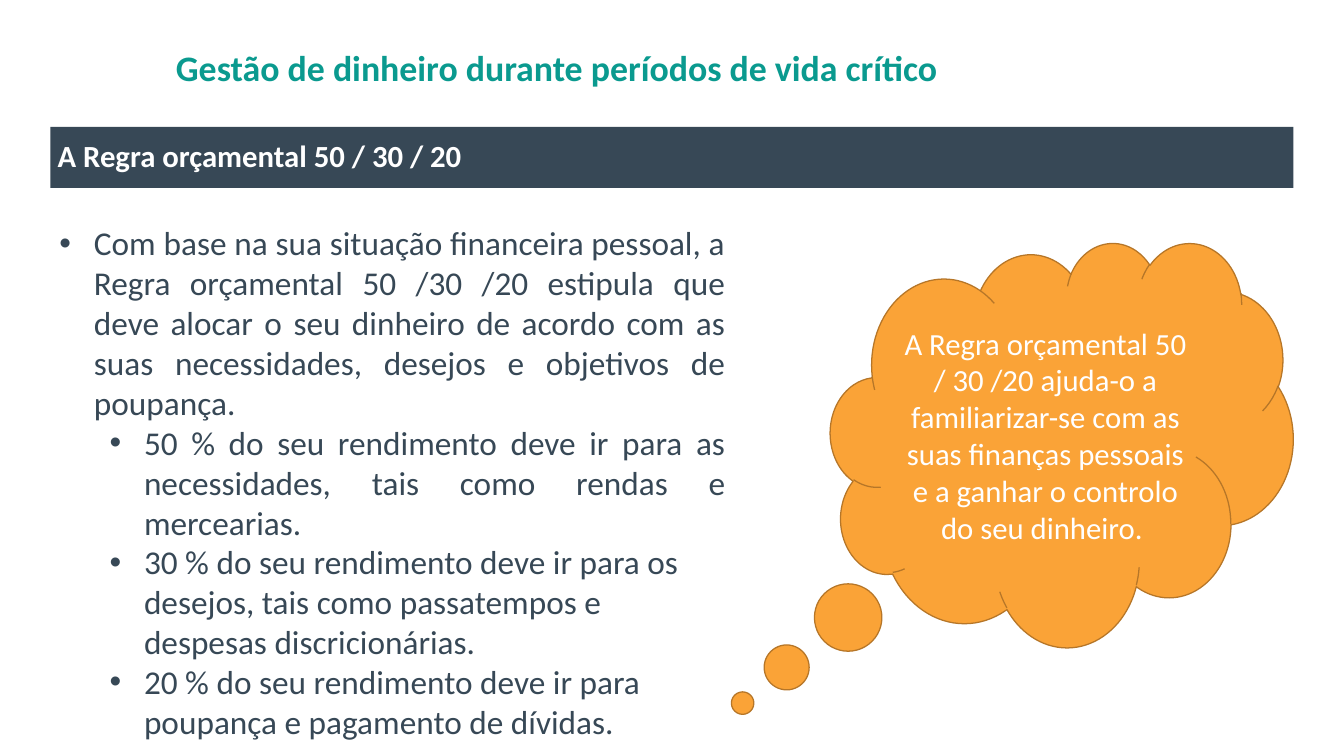
from lxml import etree
from pptx import Presentation
from pptx.dml.color import RGBColor
from pptx.enum import shapes, text
from pptx.oxml import ns
from pptx.util import Cm, Pt

SIZE = (1050, 591)  # points
TEAL, SLATE, WHITE = "0A9A8F", "374856", "FFFFFF"
ORANGE, BROWN = "FAA337", "B67628"
LEFT, CENTER, JUST = (text.PP_ALIGN.LEFT, text.PP_ALIGN.CENTER,
                      text.PP_ALIGN.JUSTIFY)

TITLE = "Gestão de dinheiro durante períodos de vida crítico"
HEAD = "A Regra orçamental 50 / 30 / 20 "
# level, alignment, wording
RULES = [
    (0, JUST, "Com base na sua situação financeira pessoal, a Regra orçamental "
              "50 /30 /20 estipula que deve alocar o seu dinheiro de acordo com "
              "as suas necessidades, desejos e objetivos de poupança. "),
    (1, JUST, "50 % do seu rendimento deve ir para as necessidades, tais como "
              "rendas e mercearias. "),
    (1, LEFT, "30 % do seu rendimento deve ir para os desejos, tais como "
              "passatempos e despesas discricionárias."),
    (1, LEFT, "20 % do seu rendimento deve ir para poupança e pagamento de "
              "dívidas."),
]
THOUGHT = ("A Regra orçamental 50 / 30 /20 ajuda-o a familiarizar-se com as "
           "suas finanças pessoais e a ganhar o controlo do seu dinheiro. ")

# left, top, width, height in cm
TITLE_BOX = (4.65, 0.93, 25.35, 2.01)
HEAD_BOX = (1.39, 3.5, 34.26, 1.68)
RULES_BOX = (1.39, 6.01, 18.87, 14.71)
CLOUD_BOX = (22.89, 6.68, 12.75, 11.15)
TAIL = (-0.69, 0.64)
HANG, STEP = 0.95, 1.38


def rgb(code):
    return RGBColor.from_string(code)


def frame(shape, side, anchor):
    """Set wrapping, margins and anchor, and return the text frame."""
    tf = shape.text_frame
    form = {"word_wrap": True, "vertical_anchor": anchor,
            "margin_left": Cm(side), "margin_right": Cm(side),
            "margin_top": Cm(0.13), "margin_bottom": Cm(0.13)}
    for key, val in form.items():
        setattr(tf, key, val)
    return tf


def write(par, words, size, color, align=LEFT, bold=False, spacing=1.0):
    par.alignment = align
    par.line_spacing = spacing
    run = par.add_run()
    run.text = words
    form = {"name": "Calibri", "size": Pt(size), "bold": bold}
    for key, val in form.items():
        setattr(run.font, key, val)
    run.font.color.rgb = rgb(color)


def bullet(par, level):
    par.level = level
    ppr = par._p.get_or_add_pPr()
    ppr.set("marL", str(Cm(HANG + level * STEP)))
    ppr.set("indent", str(-Cm(HANG)))
    tint = etree.SubElement(ppr, ns.qn("a:buClr"))
    etree.SubElement(tint, ns.qn("a:srgbClr")).set("val", SLATE)
    etree.SubElement(ppr, ns.qn("a:buFont")).set("typeface", "Arial")
    etree.SubElement(ppr, ns.qn("a:buChar")).set("char", "•")


def add_shape(slide, kind, box, fill):
    shape = slide.shapes.add_shape(kind, *map(Cm, box))
    shape.shadow.inherit = False
    shape.fill.solid()
    shape.fill.fore_color.rgb = rgb(fill)
    return shape


def main():
    prs = Presentation()
    prs.slide_width, prs.slide_height = map(Pt, SIZE)
    slide = prs.slides.add_slide(prs.slide_layouts[6])
    middle, top = text.MSO_ANCHOR.MIDDLE, text.MSO_ANCHOR.TOP

    title = slide.shapes.add_textbox(*map(Cm, TITLE_BOX))
    write(frame(title, 0.2, middle).paragraphs[0], TITLE, 28, TEAL,
          bold=True, spacing=0.9)

    bar = add_shape(slide, shapes.MSO_SHAPE.RECTANGLE, HEAD_BOX, SLATE)
    bar.line.fill.background()
    write(frame(bar, 0.2, middle).paragraphs[0], HEAD, 24, WHITE, JUST,
          bold=True, spacing=0.9)

    rules = slide.shapes.add_textbox(*map(Cm, RULES_BOX))
    tf = frame(rules, 0.25, top)
    tf.auto_size = text.MSO_AUTO_SIZE.SHAPE_TO_FIT_TEXT
    for i, (level, align, words) in enumerate(RULES):
        par = tf.add_paragraph() if i else tf.paragraphs[0]
        bullet(par, level)
        write(par, words, 26, SLATE, align)

    cloud = add_shape(slide, shapes.MSO_SHAPE.CLOUD_CALLOUT, CLOUD_BOX, ORANGE)
    cloud.line.color.rgb = rgb(BROWN)
    cloud.line.width = Pt(1)
    for i, val in enumerate(TAIL):
        cloud.adjustments[i] = val
    write(frame(cloud, 0.25, middle).paragraphs[0], THOUGHT, 24, WHITE, CENTER)

    prs.save("out.pptx")


if __name__ == "__main__":
    main()
